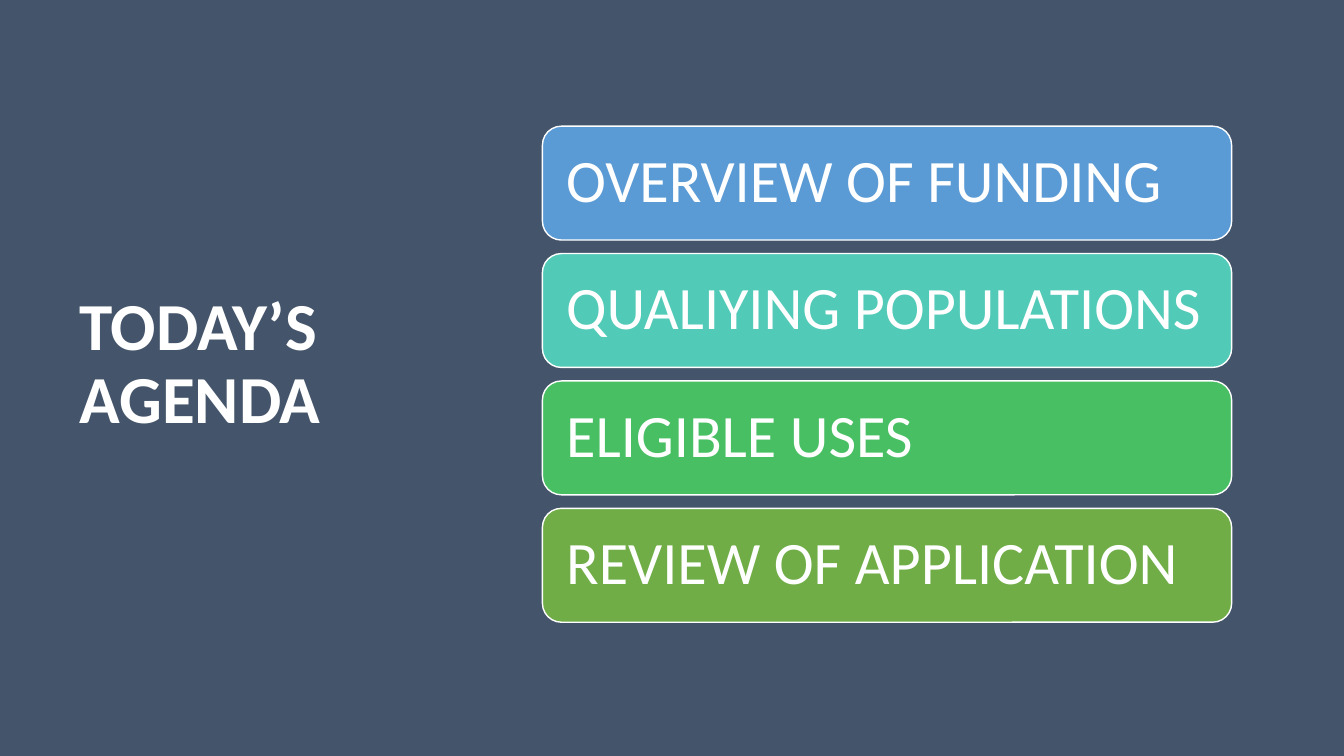
import pptx
import pptx.dml.color
import pptx.enum.shapes
import pptx.enum.text
import pptx.util

Cm = pptx.util.Cm
Pt = pptx.util.Pt
RGBColor = pptx.dml.color.RGBColor

SLATE = RGBColor(0x44, 0x54, 0x6A)
WHITE = RGBColor(0xFF, 0xFF, 0xFF)
BLUE = RGBColor(0x5B, 0x9B, 0xD5)
TEAL = RGBColor(0x52, 0xCA, 0xB8)
GREEN = RGBColor(0x49, 0xBF, 0x64)
OLIVE = RGBColor(0x70, 0xAD, 0x47)

AGENDA = [
    ("OVERVIEW OF FUNDING", BLUE),
    ("QUALIYING POPULATIONS", TEAL),
    ("ELIGIBLE USES", GREEN),
    ("REVIEW OF APPLICATION", OLIVE),
]
FIRST_TOP = 3.18
BAR_PITCH = 3.21


class AgendaPage:
    font_name = "Calibri"

    def __init__(self, deck):
        self.page = deck.slides.add_slide(deck.slide_layouts[5])
        fill = self.page.background.fill
        fill.solid()
        fill.fore_color.rgb = SLATE

    def set_text(self, box, text, size, bold=False):
        frame = box.text_frame
        frame.text = text
        frame.word_wrap = True
        frame.auto_size = pptx.enum.text.MSO_AUTO_SIZE.NONE
        frame.vertical_anchor = pptx.enum.text.MSO_ANCHOR.MIDDLE
        para = frame.paragraphs[0]
        para.alignment = pptx.enum.text.PP_ALIGN.LEFT
        para.line_spacing = 0.9
        font = para.runs[0].font
        font.name = self.font_name
        font.size = Pt(size)
        font.bold = bold
        font.color.rgb = WHITE

    def title(self, text):
        box = self.page.shapes.title
        box.left, box.top = Cm(1.75), Cm(1.37)
        box.width, box.height = Cm(11.66), Cm(15.67)
        self.set_text(box, text, 48, bold=True)

    def bar(self, text, top, color):
        box = self.page.shapes.add_shape(
            pptx.enum.shapes.MSO_SHAPE.ROUNDED_RECTANGLE,
            Cm(13.67), Cm(top), Cm(17.37), Cm(2.87))
        box.shadow.inherit = False
        box.fill.solid()
        box.fill.fore_color.rgb = color
        box.line.color.rgb = WHITE
        box.line.width = Pt(1)
        frame = box.text_frame
        frame.margin_left = frame.margin_right = Cm(0.46)
        frame.margin_top = frame.margin_bottom = Cm(0.46)
        self.set_text(box, text, 43)


def main():
    deck = pptx.Presentation()
    deck.slide_width = Cm(33.87)
    deck.slide_height = Cm(19.05)
    agenda = AgendaPage(deck)
    agenda.title("TODAY’S AGENDA")
    for index, (text, color) in enumerate(AGENDA):
        agenda.bar(text, FIRST_TOP + index * BAR_PITCH, color)
    deck.save("out.pptx")


if __name__ == "__main__":
    main()
